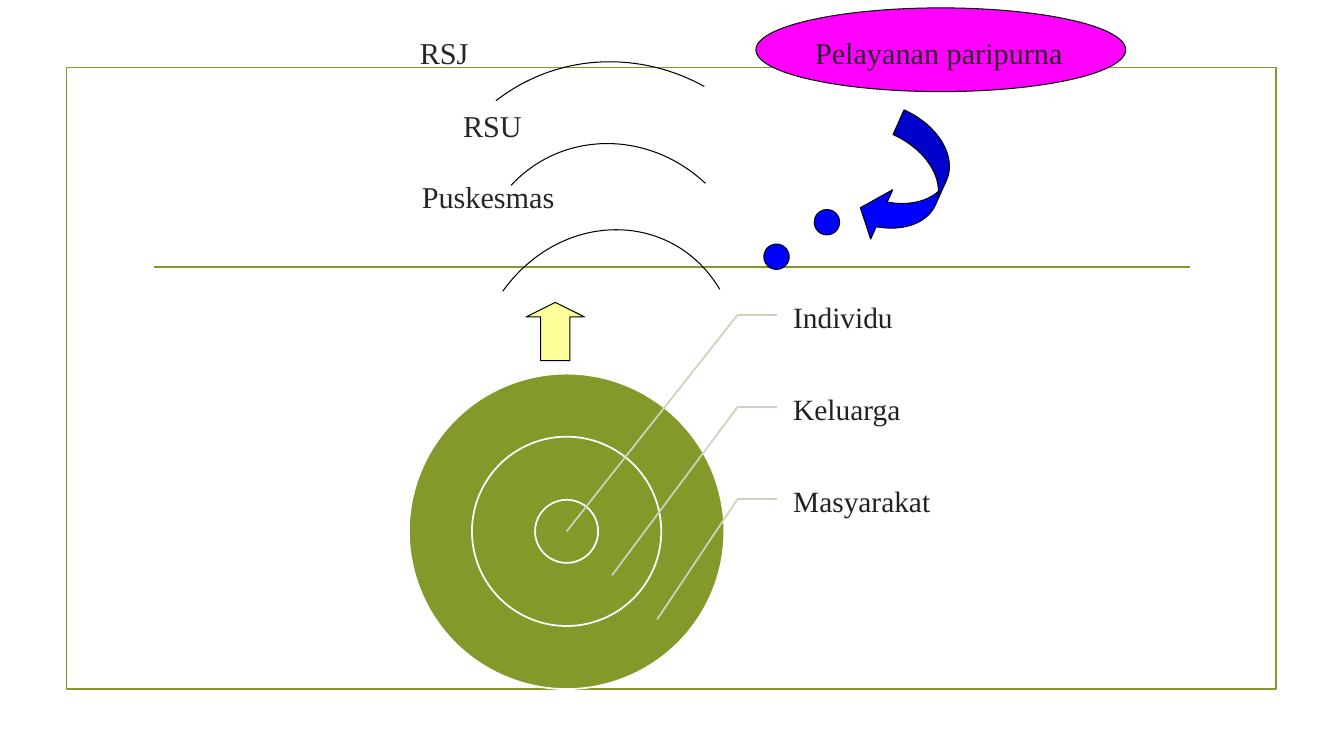
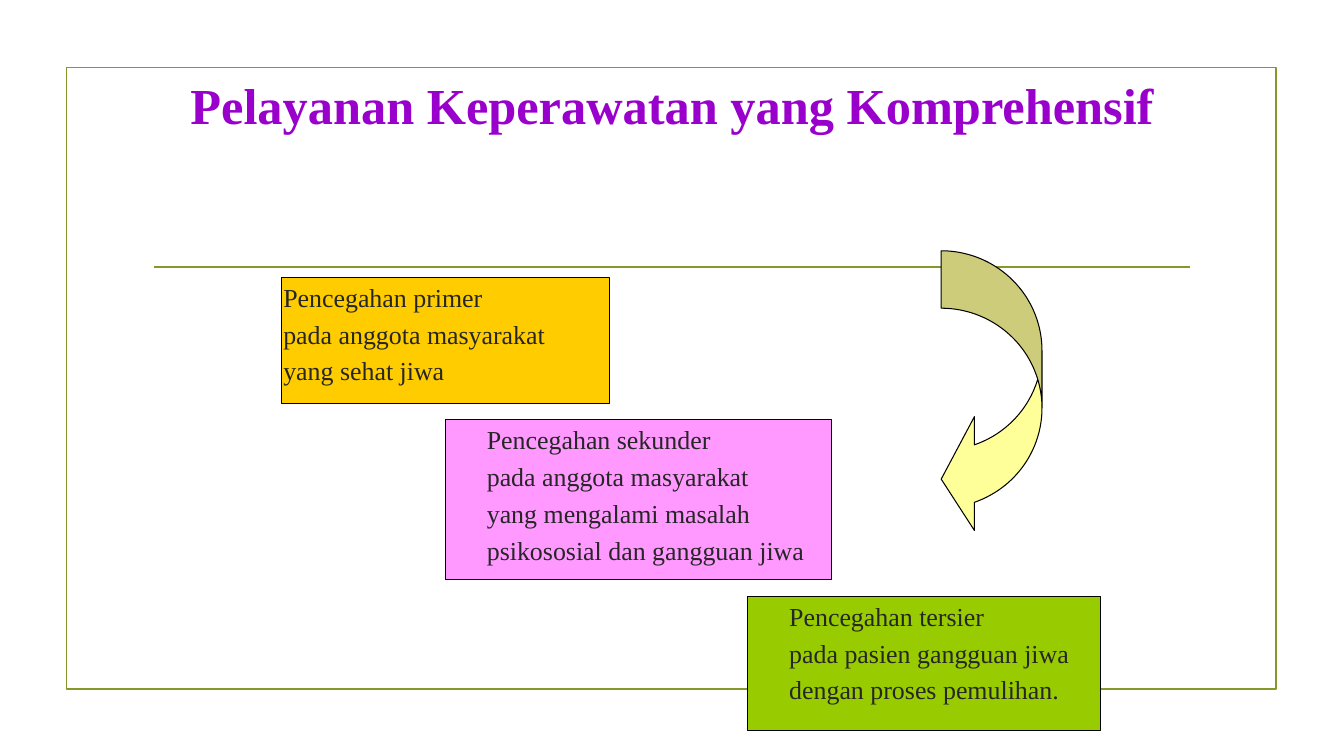
"""Build two slides on comprehensive mental health nursing care."""
from lxml import etree
from pptx import Presentation
from pptx import util as u
from pptx.dml.color import RGBColor
from pptx.enum import shapes, text
from pptx.oxml.ns import qn

Cm, Pt = u.Cm, u.Pt
PRESET = shapes.MSO_SHAPE
ALIGN = text.PP_ALIGN
ANCHOR = text.MSO_ANCHOR


def color(value):
    """Turn a hex string into a colour."""
    return RGBColor.from_string(value)


def write(shape, content, size=21.6, ink="262626", bold=False, align=ALIGN.LEFT,
          anchor=ANCHOR.MIDDLE, insets=(0, 0, 0, 0), gap=0, wrap=True):
    """Fill a shape with one formatted paragraph per line."""
    frame = shape.text_frame
    frame.text = content
    frame.auto_size = text.MSO_AUTO_SIZE.NONE
    frame.word_wrap = wrap
    frame.vertical_anchor = anchor
    (frame.margin_left, frame.margin_top,
     frame.margin_right, frame.margin_bottom) = map(Cm, insets)
    for index, paragraph in enumerate(frame.paragraphs):
        paragraph.alignment = align
        paragraph.space_before = Pt(gap if index else 0)
        font = paragraph.font
        font.name, font.size, font.bold = Deck.FONT, Pt(size), bold
        font.color.rgb = color(ink)


class Deck:
    """Hold the style, the presentation and the current slide."""

    FONT = "Times New Roman"
    OLIVE, BLACK, WHITE = "83992A", "000000", "FFFFFF"
    LEADER, BLUE, YELLOW = "CDD4BE", "0000FF", "FFFF99"
    THIN, MEDIUM = 0.75, 1.25

    def __init__(self):
        self.presentation = Presentation()
        self.presentation.slide_width = Cm(33.87)
        self.presentation.slide_height = Cm(19.05)
        self.slide = None

    def new_slide(self):
        """Start a slide with the olive frame and rule."""
        layout = self.presentation.slide_layouts[5]
        self.slide = self.presentation.slides.add_slide(layout)
        self.shape(PRESET.RECTANGLE, 1.68, 1.7, 30.48, 15.67,
                   line=self.OLIVE, weight=self.MEDIUM)
        self.line((3.89, 6.73), (30, 6.73), self.OLIVE)

    def finish(self, shape, fill, line, weight):
        """Apply fill and outline and drop the shadow."""
        shape.shadow.inherit = False
        if fill:
            shape.fill.solid()
            shape.fill.fore_color.rgb = color(fill)
        else:
            shape.fill.background()
        shape.line.color.rgb = color(line)
        shape.line.width = Pt(weight)
        return shape

    def shape(self, kind, left, top, width, height, fill=None, line=BLACK,
              weight=THIN, rotation=0, adjustments=()):
        """Add a preset shape."""
        shape = self.slide.shapes.add_shape(
            kind, Cm(left), Cm(top), Cm(width), Cm(height))
        shape.rotation = rotation
        for index, value in enumerate(adjustments):
            shape.adjustments[index] = value
        return self.finish(shape, fill, line, weight)

    def line(self, start, end, ink):
        """Add a straight line."""
        connector = self.slide.shapes.add_connector(
            shapes.MSO_CONNECTOR.STRAIGHT, *map(Cm, (*start, *end)))
        connector.line.color.rgb = color(ink)
        connector.line.width = Pt(self.MEDIUM)
        etree.SubElement(connector.element.spPr, qn("a:effectLst"))

    def arc(self, *controls, steps=40):
        """Draw a cubic curve through its four control points."""
        points = []
        for step in range(steps + 1):
            t = step / steps
            weights = (1 - t) ** 3, 3 * t * (1 - t) ** 2, 3 * t * t * (1 - t), t ** 3
            points.append(tuple(Cm(sum(w * v for w, v in zip(weights, axis)))
                                for axis in zip(*controls)))
        builder = self.slide.shapes.build_freeform(*points[0])
        builder.add_line_segments(points[1:], close=False)
        self.finish(builder.convert_to_shape(), None, self.BLACK, self.THIN)

    def title(self, content, left, top, width, height, **style):
        """Place the title in front of the shapes drawn so far."""
        title = self.slide.shapes.title
        title.left, title.top, title.width, title.height = map(
            Cm, (left, top, width, height))
        title.element.getparent().append(title.element)
        write(title, content, **style)

    def label(self, content, left, middle, **style):
        """Add a one-line label centred on a height."""
        height = 1.2
        box = self.slide.shapes.add_textbox(
            Cm(left), Cm(middle - height / 2), Cm(4.5), Cm(height))
        write(box, content, **style)


def build_service_levels(deck):
    """Show care levels above the circles of people served."""
    deck.new_slide()
    deck.shape(PRESET.OVAL, 19.05, 0.2, 9.32, 2.11, fill="FF00FF")
    deck.title("Pelayanan paripurna", 19.05, 0.71, 9.22, 1.2, align=ALIGN.CENTER)
    for name, left, middle in (("RSJ", 10.58, 1.31), ("RSU", 11.67, 3.15),
                               ("Puskesmas", 10.63, 4.96)):
        deck.label(name, left, middle)

    center_x, center_y, unit = 14.28, 13.39, 1.59
    for multiple in (5, 3, 1):
        size = unit * multiple
        deck.shape(PRESET.OVAL, center_x - size / 2, center_y - size / 2, size, size,
                   fill=deck.OLIVE, line=deck.WHITE, weight=deck.MEDIUM)
    for index, name in enumerate(("Individu", "Keluarga", "Masyarakat")):
        middle = 7.93 + 2.32 * index
        bend = (18.59, middle)
        deck.label(name, 19.99, middle + 0.04, size=21, ink="212121")
        deck.line(bend, (19.58, middle), deck.LEADER)
        deck.line(bend, (center_x + 1.14 * index, center_y + 1.11 * index), deck.LEADER)

    deck.shape(PRESET.UP_ARROW, 13.26, 7.62, 1.47, 1.47,
               fill=deck.YELLOW, adjustments=(0.5, 0.25))
    deck.arc((12.67, 7.34), (14.15, 5.28), (16.94, 5.28), (18.14, 7.29))
    deck.arc((12.88, 4.67), (14.15, 3.3), (16.31, 3.25), (17.78, 4.62))
    deck.arc((12.5, 2.54), (14, 1.37), (16.05, 1.24), (17.75, 2.18))
    deck.shape(PRESET.CURVED_LEFT_ARROW, 22.02, 2.97, 1.7, 3.38, fill=deck.BLUE,
               rotation=24.1, adjustments=(0.4, 0.8, 0.33))
    for left, top in ((20.52, 5.28), (19.25, 6.15)):
        deck.shape(PRESET.FLOWCHART_CONNECTOR, left, top, 0.64, 0.64, fill=deck.BLUE)


def build_prevention_steps(deck):
    """Show the three prevention levels as descending boxes."""
    deck.new_slide()
    deck.title("Pelayanan Keperawatan yang Komprehensif", 4.55, 1.74, 26.34, 1.8,
               size=36, ink="9900CC", bold=True, insets=(0.25, 0, 0.25, 0))
    steps = (
        ("Pencegahan primer\npada anggota masyarakat\nyang sehat jiwa",
         (7.09, 6.99, 8.26, 3.18), "FFCC00", 0.05),
        ("Pencegahan sekunder\npada anggota masyarakat\nyang mengalami masalah\n"
         "psikososial dan gangguan jiwa",
         (11.22, 10.58, 9.74, 4.03), "FF99FF", 1.05),
        ("Pencegahan tersier\npada pasien gangguan jiwa\ndengan proses pemulihan.",
         (18.84, 15.03, 8.89, 3.39), "99CC00", 1.05),
    )
    for content, place, fill, indent in steps:
        box = deck.shape(PRESET.RECTANGLE, *place, fill=fill)
        write(box, content, size=18.5, anchor=ANCHOR.TOP,
              insets=(indent, 0.1, 0, 0), gap=4.1, wrap=False)
    deck.shape(PRESET.CURVED_LEFT_ARROW, 23.72, 6.32, 2.54, 7.19,
               fill=deck.YELLOW, adjustments=(0.57, 1.13, 0.33))


def main():
    """Build and save the presentation."""
    deck = Deck()
    build_service_levels(deck)
    build_prevention_steps(deck)
    deck.presentation.save("out.pptx")


if __name__ == "__main__":
    main()
